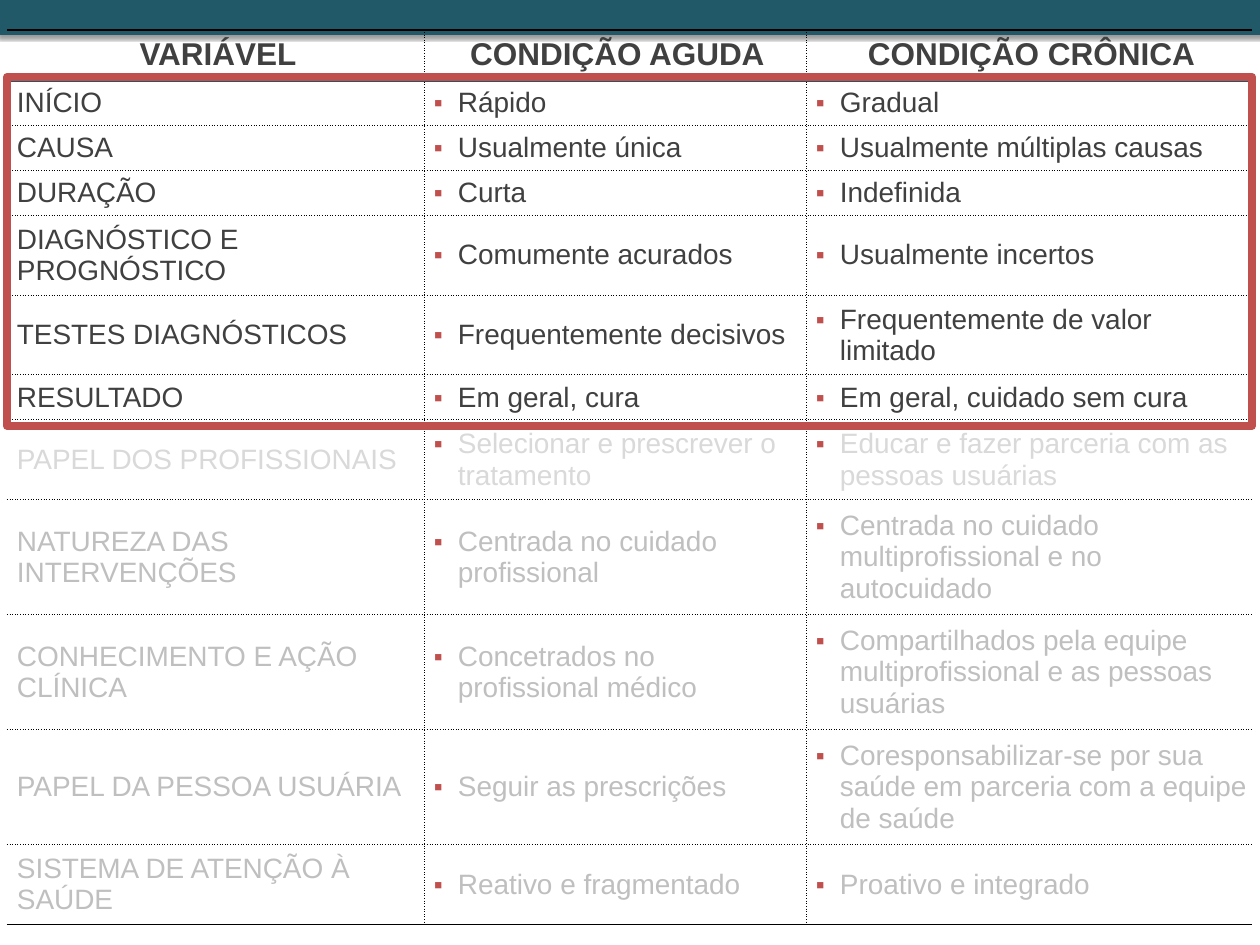
from lxml.etree import SubElement
from pptx import Presentation
from pptx.dml.color import RGBColor
from pptx.enum.shapes import MSO_SHAPE as Shape
from pptx.enum.text import MSO_ANCHOR as Anchor, PP_ALIGN as Align
from pptx.oxml.ns import qn
from pptx.util import Emu, Pt

PX = 7258  # EMU per px, 126 px to the inch
TEAL, RED, BLACK = "215968", "C0504D", "000000"
DARK, PALE, GREY = "404040", "D9D9D9", "BFBFBF"

HEADERS = ["VARIÁVEL", "CONDIÇÃO AGUDA", "CONDIÇÃO CRÔNICA"]
# variable, acute, chronic, row height, text colour
ROWS = [
    ("INÍCIO", "Rápido", "Gradual", 45, DARK),
    ("CAUSA", "Usualmente única", "Usualmente múltiplas causas", 45, DARK),
    ("DURAÇÃO", "Curta", "Indefinida", 45, DARK),
    ("DIAGNÓSTICO E PROGNÓSTICO", "Comumente acurados", "Usualmente incertos", 80, DARK),
    ("TESTES DIAGNÓSTICOS", "Frequentemente decisivos",
     "Frequentemente de valor limitado", 80, DARK),
    ("RESULTADO", "Em geral, cura", "Em geral, cuidado sem cura", 45, DARK),
    ("PAPEL DOS PROFISSIONAIS", "Selecionar e prescrever o tratamento",
     "Educar e fazer parceria com as pessoas usuárias", 80, PALE),
    ("NATUREZA DAS INTERVENÇÕES", "Centrada no cuidado profissional",
     "Centrada no cuidado multiprofissional e no autocuidado", 115, GREY),
    ("CONHECIMENTO E AÇÃO CLÍNICA", "Concetrados no profissional médico",
     "Compartilhados pela equipe multiprofissional e as pessoas usuárias", 115, GREY),
    ("PAPEL DA PESSOA USUÁRIA", "Seguir as prescrições",
     "Coresponsabilizar-se por sua saúde em parceria com a equipe de saúde", 115, GREY),
    ("SISTEMA DE ATENÇÃO À SAÚDE", "Reativo e fragmentado", "Proativo e integrado", 80, GREY),
]
COLUMNS = [417, 382, 446]
HEADER_HEIGHT = 50
TABLE_LEFT, TABLE_TOP = 7, 30

# Border styles: colour, width in points, dash
DOTTED = (BLACK, 0.5, "sysDot")
EDGE = (BLACK, 1, "solid")
RULE = (TEAL, 3, "solid")


def px(value):
    return Emu(value * PX)


def rgb(color):
    return RGBColor.from_string(color)


def add(parent, tag, **attributes):
    return SubElement(parent, qn(tag), {k: str(v) for k, v in attributes.items()})


def add_color(parent, color):
    return add(parent, "a:srgbClr", val=color)


def add_box(page, left, top, width, height, fill=None, line=None, weight=0):
    box = page.shapes.add_shape(Shape.RECTANGLE, px(left), px(top), px(width), px(height))
    box.shadow.inherit = False
    if fill:
        box.fill.solid()
        box.fill.fore_color.rgb = rgb(fill)
    else:
        box.fill.background()
    if line:
        box.line.color.rgb = rgb(line)
        box.line.width = Pt(weight)
    else:
        box.line.fill.background()
    return box


def write(cell, text, size=16, color=DARK, bold=False, align=Align.LEFT, indent=0, bullet=None):
    cell.vertical_anchor = Anchor.MIDDLE
    cell.margin_left = px(10)
    cell.margin_right = cell.margin_top = cell.margin_bottom = px(5)
    para = cell.text_frame.paragraphs[0]
    para.alignment = align
    span = para.add_run()
    span.text = text
    font = span.font
    font.name, font.size, font.bold = "Arial", Pt(size), bold
    font.color.rgb = rgb(color)
    props = para._p.get_or_add_pPr()
    props.set("marL", str(px(indent)))
    props.set("indent", str(px(-indent)))
    if bullet:
        add_color(add(props, "a:buClr"), RED)
        add(props, "a:buSzPct", val=90000)
        add(props, "a:buFont", typeface="Arial")
        add(props, "a:buChar", char=bullet)
    else:
        add(props, "a:buNone")


def set_borders(cell, **borders):
    props = cell._tc.get_or_add_tcPr()
    for side in "LRTB":  # the order the file format asks for
        style = borders.get(side)
        if not style:
            add(add(props, "a:ln" + side, w=0), "a:noFill")
            continue
        color, width, dash = style
        line = add(props, "a:ln" + side, w=Pt(width))
        add_color(add(line, "a:solidFill"), color)
        add(line, "a:prstDash", val=dash)


def add_bars(page):
    bar = add_box(page, -3, 0, 1266, 35, fill=TEAL)
    effects = bar._element.spPr.find(qn("a:effectLst"))
    shadow = add(effects, "a:outerShdw", blurRad=Pt(2), dist=Pt(2), dir=90 * 60000,
                 rotWithShape=0)
    add(add_color(shadow, BLACK), "a:alpha", val=40000)
    band = add_box(page, 0, 0, 1260, 25, fill=TEAL)
    add(band._element.spPr.find(".//" + qn("a:srgbClr")), "a:alpha", val=90000)


def add_comparison(page):
    heights = [HEADER_HEIGHT] + [row[3] for row in ROWS]
    table = page.shapes.add_table(
        len(heights), len(COLUMNS), px(TABLE_LEFT), px(TABLE_TOP),
        px(sum(COLUMNS)), px(sum(heights))).table
    table.first_row = table.horz_banding = False
    for column, width in zip(table.columns, COLUMNS):
        column.width = px(width)
    for row, height in zip(table.rows, heights):
        row.height = px(height)

    # Text
    for c, text in enumerate(HEADERS):
        write(table.cell(0, c), text, size=18, bold=True, align=Align.CENTER, indent=48)
    for r, (variable, acute, chronic, _, color) in enumerate(ROWS, 1):
        write(table.cell(r, 0), variable, color=color)
        for c, text in enumerate((acute, chronic), 1):
            write(table.cell(r, c), text, color=color, indent=24, bullet="▪")

    # Borders: one style per horizontal rule, open outer sides
    rules = [EDGE, RULE] + [DOTTED] * (len(ROWS) - 1) + [EDGE]
    for r in range(len(heights)):
        for c in range(len(COLUMNS)):
            cell = table.cell(r, c)
            set_borders(cell, T=rules[r], B=rules[r + 1],
                        L=DOTTED if c > 0 else None,
                        R=DOTTED if c < len(COLUMNS) - 1 else None)
            cell.fill.background()


def main():
    deck = Presentation()
    deck.slide_width, deck.slide_height = px(1260), px(945)
    page = deck.slides.add_slide(deck.slide_layouts[6])
    add_bars(page)
    add_comparison(page)
    # Frame around the highlighted rows
    add_box(page, TABLE_LEFT, 77, sum(COLUMNS), 349, line=RED, weight=4.5)
    deck.save("out.pptx")


if __name__ == "__main__":
    main()
